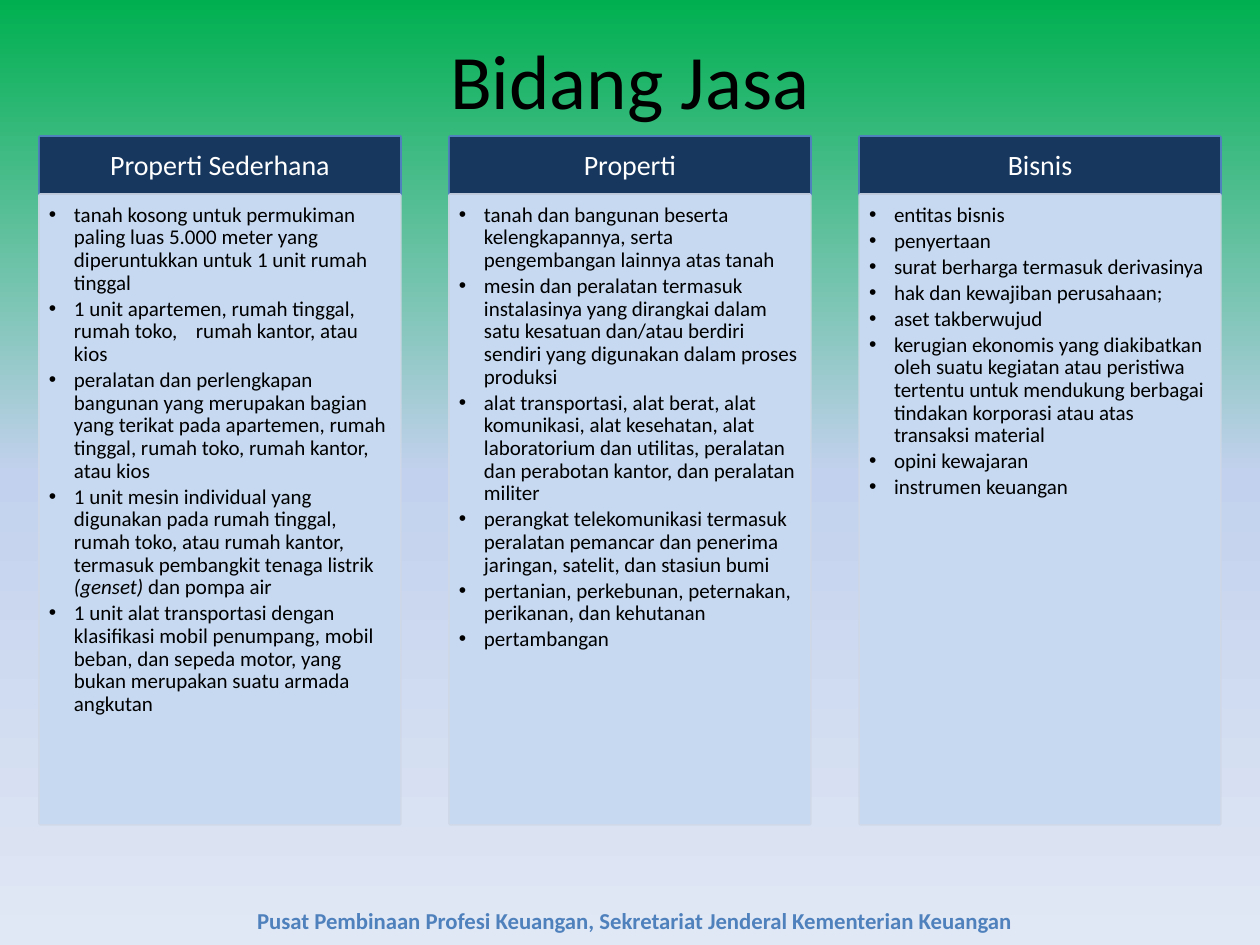
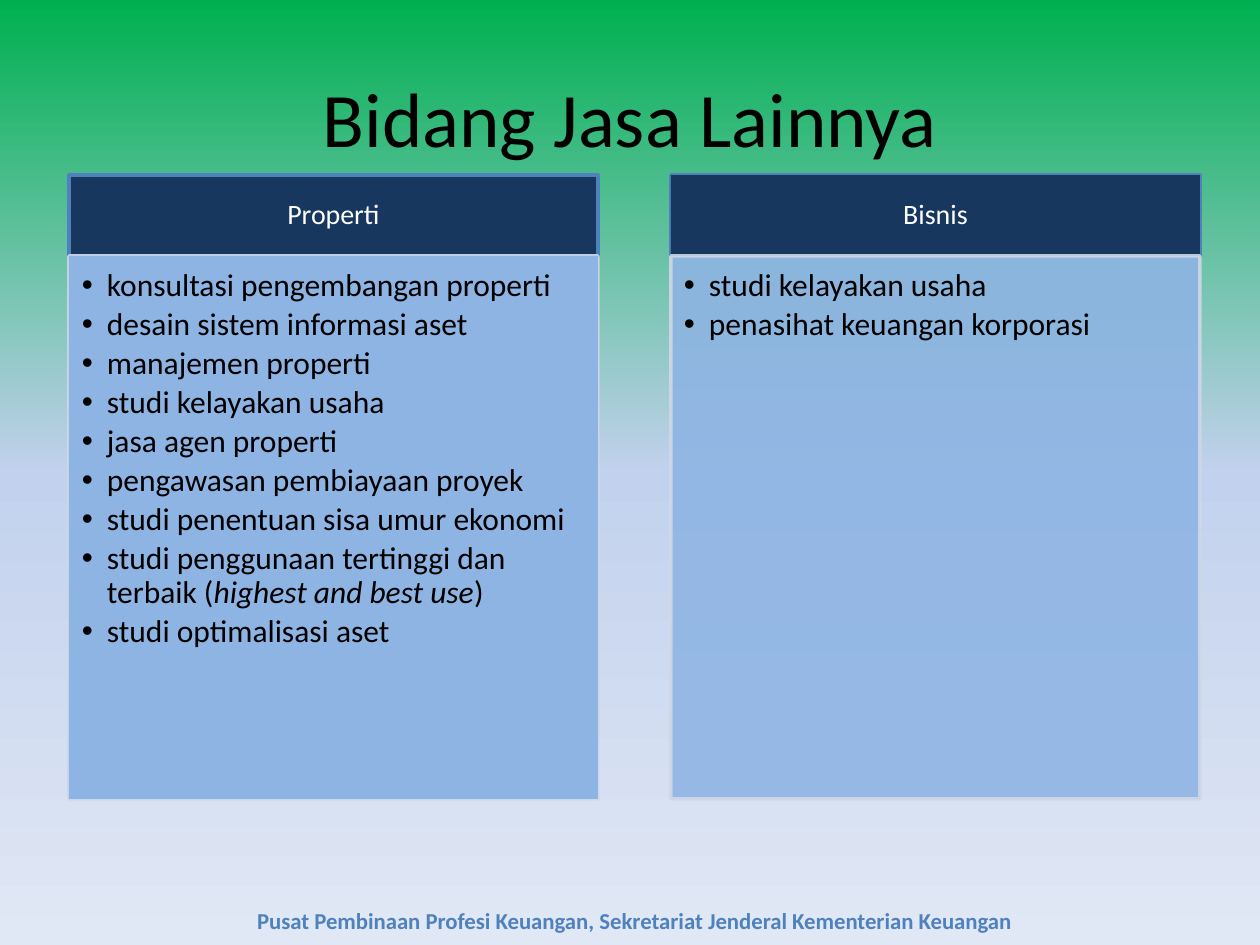
import pptx
import pptx.util
import pptx.dml.color
import pptx.enum.shapes
import pptx.enum.text
import pptx.oxml.ns
import lxml.etree

PX = 914400 / 126
FONT = "Calibri"
COLORS = {
    "black": "000000", "white": "FFFFFF", "accent": "4F81BD", "navy": "17375E",
    "pale": "C6D9F1", "sky": "8EB4E3", "border": "CFD8E7",
}
BACKGROUND = [(0, "00B050"), (50, "C2D1ED"), (100, "E1E8F5")]
FOOTER = "Pusat Pembinaan Profesi Keuangan, Sekretariat Jenderal Kementerian Keuangan"

# An item is a string, or a tuple whose every second part is italic.
SLIDES = [
    {
        "title": "Bidang Jasa", "title_top": 0,
        "left": 40, "top": 137, "width": 360, "pitch": 410,
        "header_height": 58, "body_height": 629,
        "body_fill": "pale", "body_size": 12, "body_insets": (9, 9, 12, 12),
        "columns": [
            ("Properti Sederhana", [
                "tanah kosong untuk permukiman paling luas 5.000 meter yang diperuntukkan untuk 1 unit rumah tinggal",
                "1 unit apartemen, rumah tinggal, rumah toko,\trumah kantor, atau kios",
                "peralatan dan perlengkapan bangunan yang merupakan bagian yang terikat pada apartemen, "
                "rumah tinggal, rumah toko, rumah kantor, atau kios",
                ("1 unit mesin individual yang digunakan pada rumah tinggal, rumah toko, atau rumah kantor, "
                 "termasuk pembangkit tenaga listrik ", "(genset)", " dan pompa air"),
                "1 unit alat transportasi dengan klasifikasi mobil penumpang, mobil beban, dan sepeda motor, "
                "yang bukan merupakan suatu armada angkutan",
            ]),
            ("Properti", [
                "tanah dan bangunan beserta kelengkapannya, serta pengembangan lainnya atas tanah",
                "mesin dan peralatan termasuk instalasinya yang dirangkai dalam satu kesatuan dan/atau "
                "berdiri sendiri yang digunakan dalam proses produksi",
                "alat transportasi, alat berat, alat komunikasi, alat kesehatan, alat laboratorium dan utilitas, "
                "peralatan dan perabotan kantor, dan peralatan militer",
                "perangkat telekomunikasi termasuk peralatan pemancar dan penerima jaringan, satelit, dan stasiun bumi",
                "pertanian, perkebunan, peternakan, perikanan, dan kehutanan",
                "pertambangan",
            ]),
            ("Bisnis", [
                "entitas bisnis",
                "penyertaan",
                "surat berharga termasuk derivasinya",
                "hak dan kewajiban perusahaan;",
                "aset takberwujud",
                "kerugian ekonomis yang diakibatkan oleh suatu kegiatan atau peristiwa tertentu "
                "untuk mendukung berbagai tindakan korporasi atau atas transaksi material",
                "opini kewajaran",
                "instrumen keuangan",
            ]),
        ],
        "full_borders": set(),
    },
    {
        "title": "Bidang Jasa Lainnya", "title_top": 38,
        "left": 69, "top": 175, "width": 529, "pitch": 602,
        "header_height": 81, "body_height": 543,
        "body_fill": "sky", "body_size": 18, "body_insets": (13, 13, 18, 20),
        "columns": [
            ("Properti", [
                "konsultasi pengembangan properti",
                "desain sistem informasi aset",
                "manajemen properti",
                "studi kelayakan usaha",
                "jasa agen properti",
                "pengawasan pembiayaan proyek",
                "studi penentuan sisa umur ekonomi",
                ("studi penggunaan tertinggi dan terbaik (", "highest and best use", ")"),
                "studi optimalisasi aset",
            ]),
            ("Bisnis", ["studi kelayakan usaha", "penasihat keuangan korporasi"]),
        ],
        "full_borders": {(0, "header"), (1, "body")},
    },
]

ALIGN = pptx.enum.text.PP_ALIGN
ANCHOR = pptx.enum.text.MSO_ANCHOR
qn = pptx.oxml.ns.qn


def px(length):
    return pptx.util.Emu(round(length * PX))


def rgb(name):
    return pptx.dml.color.RGBColor.from_string(COLORS[name])


def add_bullet(paragraph, indent=25, tab=147):
    properties = paragraph._p.get_or_add_pPr()
    properties.set("marL", str(px(indent)))
    properties.set("indent", str(-px(indent)))
    lxml.etree.SubElement(properties, qn("a:buFont"), typeface="Arial")
    lxml.etree.SubElement(properties, qn("a:buChar"), char="•")
    stops = lxml.etree.SubElement(properties, qn("a:tabLst"))
    lxml.etree.SubElement(stops, qn("a:tab"), pos=str(px(tab)), algn="l")


def write(frame, items, size, color="black", bold=False, align=ALIGN.CENTER, anchor=ANCHOR.MIDDLE,
          insets=None, bullets=False, line_spacing=None, after=0):
    """Fill a text frame with one paragraph per item; after is a share of the text size."""
    frame.word_wrap = True
    frame.vertical_anchor = anchor
    if insets:
        frame.margin_left, frame.margin_top, frame.margin_right, frame.margin_bottom = map(px, insets)
    for number, item in enumerate(items):
        paragraph = frame.add_paragraph() if number else frame.paragraphs[0]
        if bullets:
            paragraph.level = 1
            add_bullet(paragraph)
        paragraph.alignment = align
        if line_spacing:
            paragraph.line_spacing = line_spacing
        if after:
            paragraph.space_after = pptx.util.Pt(round(size * after, 1))
        for index, part in enumerate((item,) if isinstance(item, str) else item):
            run = paragraph.add_run()
            run.text = part
            run.font.name = FONT
            run.font.size = pptx.util.Pt(size)
            run.font.bold = bold
            run.font.italic = index % 2 == 1
            run.font.color.rgb = rgb(color)


def add_rectangle(slide, box, fill=None, line=None, opacity=None):
    rectangle = slide.shapes.add_shape(pptx.enum.shapes.MSO_SHAPE.RECTANGLE, *map(px, box))
    rectangle.shadow.inherit = False
    if fill:
        rectangle.fill.solid()
        rectangle.fill.fore_color.rgb = rgb(fill)
    else:
        rectangle.fill.background()
    if line:
        rectangle.line.color.rgb = rgb(line)
        rectangle.line.width = pptx.util.Pt(2)
    else:
        rectangle.line.fill.background()
    if opacity:
        for color in rectangle._element.spPr.iter(qn("a:srgbClr")):
            lxml.etree.SubElement(color, qn("a:alpha"), val=str(opacity * 1000))
    return rectangle


def add_panel(slide, box, items, fill, border, full_border, opacity=None, **text_format):
    """Draw a bordered frame and its text face; a filled face covers the border's inner half."""
    add_rectangle(slide, box, fill if full_border else border, border, opacity)
    face = add_rectangle(slide, box, None if full_border else fill)
    write(face.text_frame, items, line_spacing=0.9, **text_format)


def add_columns(slide, content):
    header_height = content["header_height"]
    for number, (heading, items) in enumerate(content["columns"]):
        left = content["left"] + number * content["pitch"]
        top, width = content["top"], content["width"]
        add_panel(slide, (left, top, width, header_height), [heading], "navy", "accent",
                  (number, "header") in content["full_borders"],
                  size=16, color="white", insets=(15, 9, 15, 9), after=0.35)
        add_panel(slide, (left, top + header_height, width, content["body_height"]), items,
                  content["body_fill"], "border", (number, "body") in content["full_borders"], opacity=89,
                  size=content["body_size"], insets=content["body_insets"], align=ALIGN.LEFT,
                  anchor=ANCHOR.TOP, bullets=True, after=0.16)


def set_background(master):
    fill = master.background.fill
    fill.gradient()
    fill.gradient_angle = 270
    stops = master.element.find(".//" + qn("a:gsLst"))
    for stop in list(stops):
        stops.remove(stop)
    for position, color in BACKGROUND:
        stop = lxml.etree.SubElement(stops, qn("a:gs"), pos=str(position * 1000))
        lxml.etree.SubElement(stop, qn("a:srgbClr"), val=color)


def add_slide(deck, content):
    slide = deck.slides.add_slide(deck.slide_layouts[5])
    title = slide.shapes.title
    title.left, title.top, title.width, title.height = map(px, (63, content["title_top"], 1134, 158))
    write(title.text_frame, [content["title"]], 44)
    footer = slide.shapes.add_textbox(*map(px, (54, 901, 1160, 38)))
    write(footer.text_frame, [FOOTER], 13, color="accent", bold=True, anchor=ANCHOR.TOP)
    add_columns(slide, content)


def main():
    deck = pptx.Presentation()
    deck.slide_width, deck.slide_height = px(1260), px(945)
    set_background(deck.slide_master)
    for content in SLIDES:
        add_slide(deck, content)
    deck.save("out.pptx")


if __name__ == "__main__":
    main()
